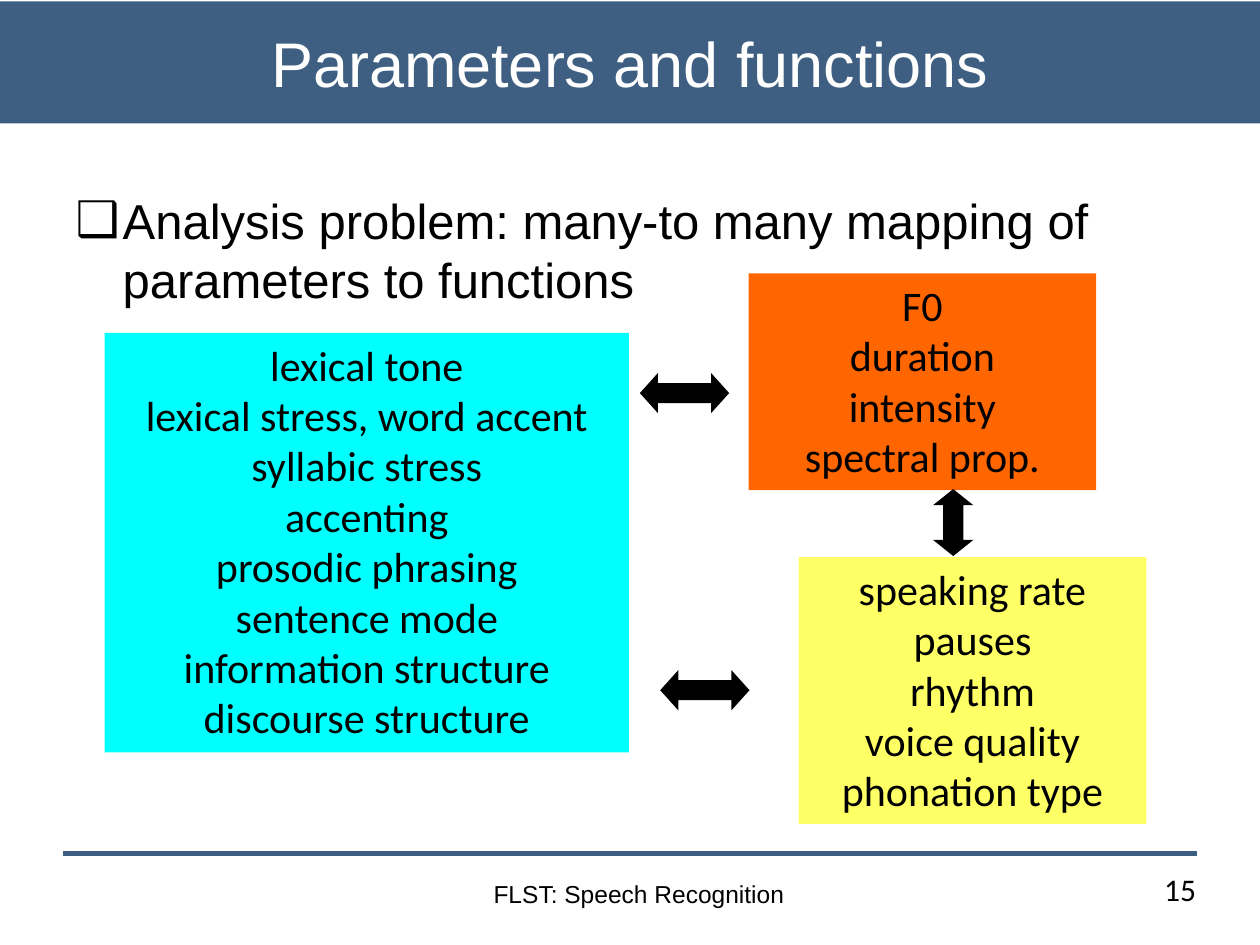
import pptx
import pptx.dml.color
import pptx.enum.shapes
import pptx.enum.text
import pptx.oxml.ns
import pptx.util
from lxml import etree

Cm = pptx.util.Cm
Pt = pptx.util.Pt
qn = pptx.oxml.ns.qn
PP_ALIGN = pptx.enum.text.PP_ALIGN
ANCHOR = pptx.enum.text.MSO_ANCHOR
AUTO_SIZE = pptx.enum.text.MSO_AUTO_SIZE
SHAPE = pptx.enum.shapes.MSO_SHAPE

COLORS = {
    "banner": "3E5F81",
    "banner_text": "FFFFFF",
    "text": "000000",
    "functions": "00FFFF",
    "acoustic": "FF6600",
    "temporal": "FFFF66",
}


def rgb(name):
    return pptx.dml.color.RGBColor.from_string(COLORS[name])


def add_text(paragraph, text, size, font, color="text", align=None):
    paragraph.alignment = align
    run = paragraph.add_run()
    run.text = text
    run.font.size = Pt(size)
    run.font.name = font
    run.font.color.rgb = rgb(color)


deck = pptx.Presentation()
deck.slide_width = Cm(25.4)
deck.slide_height = Cm(19.05)
slide = deck.slides.add_slide(deck.slide_layouts[1])

heading = slide.shapes.title
heading.left, heading.top, heading.width, heading.height = Cm(0), Cm(0.03), Cm(25.4), Cm(2.46)
heading.fill.solid()
heading.fill.fore_color.rgb = rgb("banner")
heading.text_frame.auto_size = AUTO_SIZE.NONE
heading.text_frame.vertical_anchor = ANCHOR.MIDDLE
add_text(heading.text_frame.paragraphs[0], "Parameters and functions", 36, "Arial",
         "banner_text", PP_ALIGN.CENTER)

problem = slide.placeholders[1]
problem.left, problem.top, problem.width, problem.height = Cm(1.27), Cm(3.71), Cm(22.86), Cm(13.51)
problem.text_frame.auto_size = AUTO_SIZE.NONE
statement = problem.text_frame.paragraphs[0]
statement.space_before = Pt(0)
indent = statement._p.get_or_add_pPr()
indent.set("marL", str(Cm(0.95)))
indent.set("indent", str(-Cm(0.95)))
etree.SubElement(indent, qn("a:buFont")).set("typeface", "Arial")
etree.SubElement(indent, qn("a:buChar")).set("char", "❑")
add_text(statement, "Analysis problem: many-to many mapping of parameters to functions", 28, "Arial")

footer_rule = slide.shapes.add_connector(
    pptx.enum.shapes.MSO_CONNECTOR.STRAIGHT, Cm(1.27), Cm(17.2), Cm(24.13), Cm(17.2))
footer_rule.line.color.rgb = rgb("banner")
footer_rule.line.width = Pt(3)
etree.SubElement(footer_rule._element.spPr, qn("a:effectLst"))

footer_texts = [
    ("FLST: Speech Recognition", 9.7, 17.6, 6.4, 1.45, 14, "Arial", PP_ALIGN.LEFT, False),
    ("15", 18.44, 17.42, 5.92, 1.02, 18, "Calibri", PP_ALIGN.RIGHT, True),
]
for text, left, top, width, height, size, font, align, wrap in footer_texts:
    footer = slide.shapes.add_textbox(Cm(left), Cm(top), Cm(width), Cm(height))
    footer.text_frame.word_wrap = wrap
    add_text(footer.text_frame.paragraphs[0], text, size, font, align=align)

groups = [
    ("functions", 2.11, 6.71, 10.57, 8.46,
     ["lexical tone", "lexical stress, word accent", "syllabic stress", "accenting",
      "prosodic phrasing", "sentence mode", "information structure", "discourse structure"]),
    ("temporal", 16.1, 11.23, 7.01, 5.38,
     ["speaking rate", "pauses", "rhythm", "voice quality", "phonation type"]),
    ("acoustic", 15.09, 5.51, 7.01, 4.37,
     ["F0", "duration", "intensity", "spectral prop."]),
]
for color, left, top, width, height, terms in groups:
    group = slide.shapes.add_shape(SHAPE.RECTANGLE, Cm(left), Cm(top), Cm(width), Cm(height))
    group.shadow.inherit = False
    group.fill.solid()
    group.fill.fore_color.rgb = rgb(color)
    group.line.fill.background()
    frame = group.text_frame
    frame.word_wrap = True
    frame.auto_size = AUTO_SIZE.SHAPE_TO_FIT_TEXT
    frame.vertical_anchor = ANCHOR.TOP
    for index, term in enumerate(terms):
        paragraph = frame.add_paragraph() if index else frame.paragraphs[0]
        add_text(paragraph, term, 24, "Calibri", align=PP_ALIGN.CENTER)

mappings = [
    (12.9, 7.52, 1.8, 0, 0.45),
    (13.31, 13.51, 1.8, 0, 0.45),
    (18.54, 10.13, 1.35, 90, 0.4),
]
for left, top, width, rotation, head in mappings:
    mapping = slide.shapes.add_shape(SHAPE.LEFT_RIGHT_ARROW, Cm(left), Cm(top), Cm(width), Cm(0.81))
    mapping.rotation = rotation
    mapping.adjustments[0] = 0.5
    mapping.adjustments[1] = head
    mapping.shadow.inherit = False
    mapping.fill.solid()
    mapping.fill.fore_color.rgb = rgb("text")
    mapping.line.fill.background()

deck.save("out.pptx")
